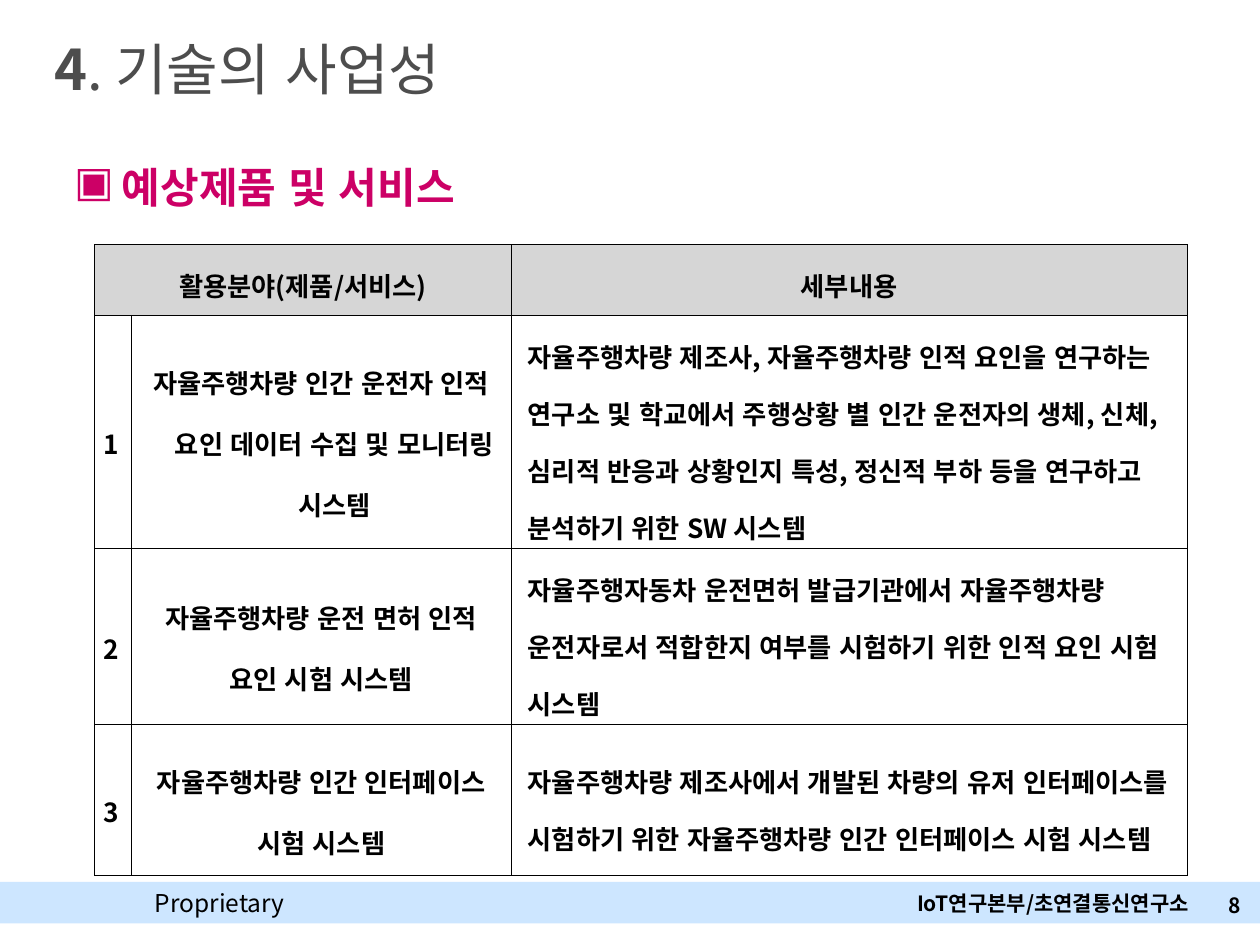
from lxml.etree import SubElement
from pptx import Presentation
from pptx.dml.color import RGBColor
from pptx.enum.lang import MSO_LANGUAGE_ID as Lang
from pptx.enum.shapes import MSO_SHAPE
from pptx.enum.text import MSO_ANCHOR as Anchor, PP_ALIGN as Align
from pptx.oxml.ns import qn
from pptx.util import Inches, Pt

# Content
TITLE = [("4", True), (". 기술의 사업성", False)]
HEADING = "예상제품 및 서비스"
HEADERS = ["활용분야(제품/서비스)", "세부내용"]
ROWS = [
    ("자율주행차량 인간 운전자 인적 요인 데이터 수집 및 모니터링 시스템",
     "자율주행차량 제조사, 자율주행차량 인적 요인을 연구하는 연구소 및 학교에서 "
     "주행상황 별 인간 운전자의 생체, 신체, 심리적 반응과 상황인지 특성, "
     "정신적 부하 등을 연구하고 분석하기 위한 SW 시스템"),
    ("자율주행차량 운전 면허 인적 요인 시험 시스템",
     "자율주행자동차 운전면허 발급기관에서 자율주행차량 운전자로서 적합한지 "
     "여부를 시험하기 위한 인적 요인 시험 시스템"),
    ("자율주행차량 인간 인터페이스 시험 시스템",
     "자율주행차량 제조사에서 개발된 차량의 유저 인터페이스를 시험하기 위한 "
     "자율주행차량 인간 인터페이스 시험 시스템"),
]
COL_WIDTHS = [0.29, 3.02, 5.36]
ROW_HEIGHTS = [0.56, 1.85, 1.4, 1.2]

THEME = {
    "font": "Noto Sans CJK KR",
    "text": "000000", "title": "4D4D4D", "accent": "CC0066",
    "band": "CDE6FF", "header": "D6D6D6",
    "title_size": 32, "heading_size": 24, "table_size": 15,
    "label_size": 14, "footer_size": 12, "border": 0.28,
}


def rgb(name):
    return RGBColor.from_string(THEME[name])


def add_run(p, text, size, color="text", bold=True):
    r = p.add_run()
    r.text = text
    font = r.font
    font.name, font.size, font.bold = THEME["font"], Pt(THEME[size]), bold
    font.color.rgb = rgb(color)
    font.language_id = Lang.KOREAN
    SubElement(r._r.get_or_add_rPr(), qn("a:ea"), typeface=THEME["font"])


def add_text(slide, box, text, size, color="text", bold=True):
    tf = slide.shapes.add_textbox(*map(Inches, box)).text_frame
    tf.word_wrap = True
    add_run(tf.paragraphs[0], text, size, color, bold)
    return tf


def set_indent(p, left, first):
    pPr = p._p.get_or_add_pPr()
    pPr.set("marL", str(Inches(left)))
    pPr.set("indent", str(Inches(first)))
    return pPr


def fill_cell(cell, text, align, spacing, header=False):
    cell.vertical_anchor = Anchor.MIDDLE
    cell.margin_left = cell.margin_right = Inches(0.07)
    cell.margin_top = cell.margin_bottom = Inches(0.02)
    p = cell.text_frame.paragraphs[0]
    p.alignment, p.line_spacing = align, spacing
    add_run(p, text, "table_size")
    style_cell(cell, header)
    return p


def style_cell(cell, header):
    tcPr = cell._tc.get_or_add_tcPr()
    for side in ("lnL", "lnR", "lnT", "lnB"):
        ln = SubElement(tcPr, qn(f"a:{side}"), w=str(Pt(THEME["border"])))
        SubElement(SubElement(ln, qn("a:solidFill")), qn("a:srgbClr"), val=THEME["text"])
    if header:
        cell.fill.solid()
        cell.fill.fore_color.rgb = rgb("header")
    else:
        cell.fill.background()


prs = Presentation()
prs.slide_width, prs.slide_height = Inches(10), Inches(7.5)
slide = prs.slides.add_slide(prs.slide_layouts[5])

# Footer band and labels
band = slide.shapes.add_shape(MSO_SHAPE.RECTANGLE, 0, Inches(7), prs.slide_width, Inches(0.33))
band.shadow.inherit = False
band.fill.solid()
band.fill.fore_color.rgb = rgb("band")
band.line.fill.background()
add_text(slide, (1.13, 7, 1.33, 0.34), "Proprietary", "label_size", bold=False)
add_text(slide, (7.18, 7.02, 2.39, 0.3), "IoT연구본부/초연결통신연구소", "footer_size")
tf = add_text(slide, (9.25, 7.08, 0.64, 0.21), "8", "footer_size")
tf.margin_left = tf.margin_right = Inches(0.04)
tf.margin_top = tf.margin_bottom = 0
tf.paragraphs[0].alignment = Align.RIGHT

# Title
title = slide.shapes.title
title.left, title.top, title.width, title.height = map(Inches, (0.33, 0.22, 7.83, 0.64))
tf = title.text_frame
tf.vertical_anchor = Anchor.MIDDLE
p = tf.paragraphs[0]
p.alignment = Align.LEFT
for text, bold in TITLE:
    add_run(p, text, "title_size", "title", bold)

# Bulleted heading
tf = add_text(slide, (0.49, 1.23, 4.1, 0.47), HEADING, "heading_size", "accent")
pPr = set_indent(tf.paragraphs[0], 0.38, -0.38)
SubElement(SubElement(pPr, qn("a:buClr")), qn("a:srgbClr"), val=THEME["accent"])
SubElement(pPr, qn("a:buChar"), char="▣")

# Table
table = slide.shapes.add_table(
    len(ROW_HEIGHTS), len(COL_WIDTHS), Inches(0.75), Inches(1.94),
    Inches(sum(COL_WIDTHS)), Inches(sum(ROW_HEIGHTS))).table
table.first_row = table.horz_banding = False
for col, width in zip(table.columns, COL_WIDTHS):
    col.width = Inches(width)
for row, height in zip(table.rows, ROW_HEIGHTS):
    row.height = Inches(height)

table.cell(0, 0).merge(table.cell(0, 1))
style_cell(table.cell(0, 1), True)
for col, text in zip((0, 2), HEADERS):
    fill_cell(table.cell(0, col), text, Align.CENTER, 1.3, header=True)
for i, (field, detail) in enumerate(ROWS, 1):
    fill_cell(table.cell(i, 0), str(i), Align.JUSTIFY, 1.6)
    p = fill_cell(table.cell(i, 1), field, Align.CENTER, 1.6)
    if i == 1:
        set_indent(p, 0.21, -0.21)
    p = fill_cell(table.cell(i, 2), detail, Align.LEFT, 1.5)
    set_indent(p, 0.06, 0)

prs.save("out.pptx")
